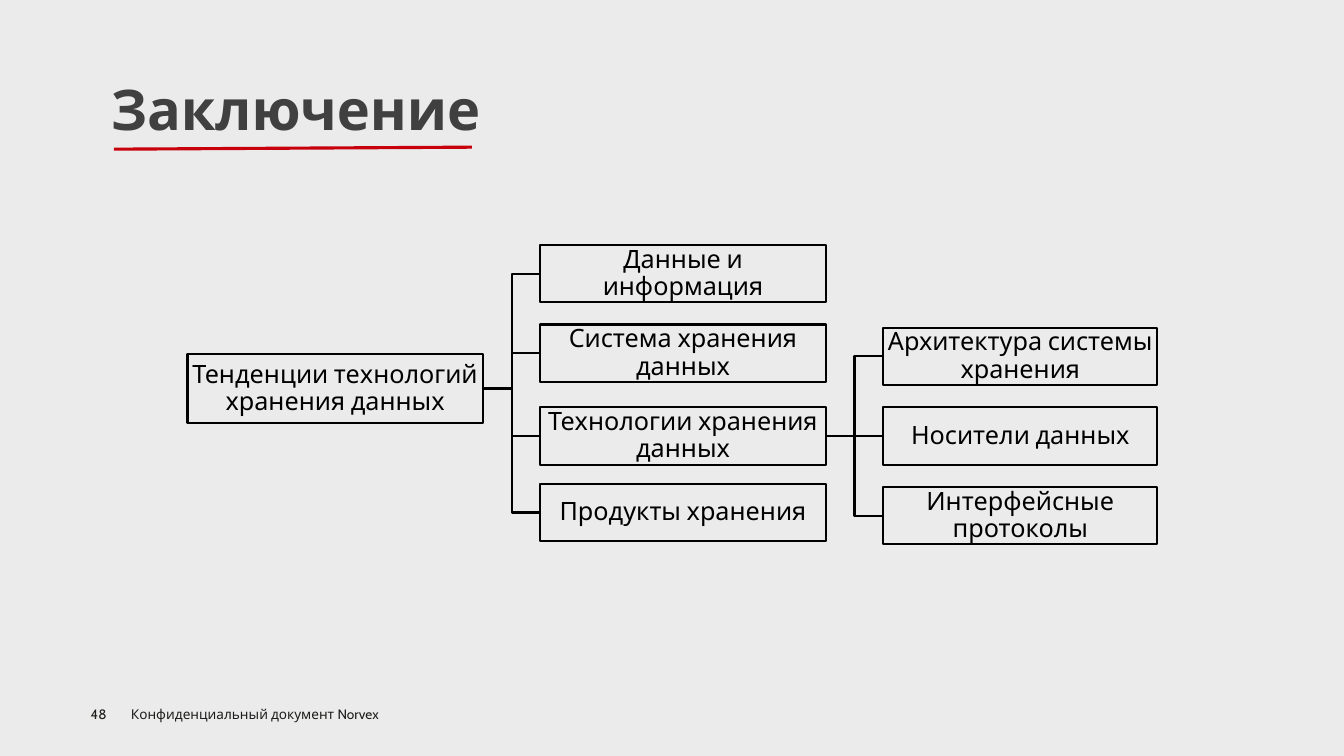
from dataclasses import dataclass

from lxml.etree import SubElement
from pptx import Presentation
from pptx.dml.color import RGBColor
from pptx.enum.shapes import MSO_CONNECTOR, MSO_SHAPE
from pptx.enum.text import MSO_ANCHOR, MSO_AUTO_SIZE, PP_ALIGN
from pptx.oxml.ns import qn
from pptx.shapes.autoshape import Shape
from pptx.shapes.connector import Connector
from pptx.slide import Slide
from pptx.text.text import TextFrame
from pptx.util import Emu, Pt

EMU_PER_PX = 9144
LEFT_SITE, RIGHT_SITE = 1, 3


@dataclass(frozen=True)
class Theme:
    font: str = "Cabin"
    background: str = "EBEBEB"
    title: str = "404040"
    accent: str = "C7000B"
    footer: str = "1D1D1B"
    diagram: str = "000000"
    title_size: float = 40
    node_size: float = 18
    footer_size: float = 9.7
    accent_width: float = 2.25
    diagram_width: float = 1.5


@dataclass(frozen=True)
class Label:
    text: str
    left: int
    top: int
    width: int
    height: int
    size: float
    color: str
    bold: bool = False
    wrap: bool = True
    inset: bool = True


@dataclass(frozen=True)
class Node:
    text: str
    left: int
    top: int
    width: int
    height: int = 57


THEME = Theme()

LABELS = [
    Label("Конфиденциальный документ Norvex", 120, 695, 281, 26,
          THEME.footer_size, THEME.footer),
    Label("48", 90, 700, 55, 16, THEME.footer_size, THEME.footer, inset=False),
    Label("Заключение", 100, 69, 401, 77, THEME.title_size, THEME.title,
          bold=True, wrap=False),
]

ROOT = Node("Тенденции технологий хранения данных", 186, 351, 293, 69)

TOPICS = [
    Node(text, 536, top, 283)
    for text, top in [
        ("Данные и информация", 243),
        ("Система хранения данных", 322),
        ("Технологии хранения данных", 404),
        ("Продукты хранения", 480),
    ]
]

SUBTOPICS = [
    Node(text, 876, 325 + 79 * row, 272)
    for row, text in enumerate(
        ["Архитектура системы хранения", "Носители данных", "Интерфейсные протоколы"]
    )
]


def px(length: int) -> Emu:
    return Emu(length * EMU_PER_PX)


def set_insets(frame: TextFrame, inset: Emu) -> None:
    frame.margin_left = frame.margin_right = inset
    frame.margin_top = frame.margin_bottom = inset


def add_span(frame: TextFrame, text: str, size: float, color: str,
             bold: bool = False) -> None:
    span = frame.paragraphs[0].add_run()
    span.text = text
    span.font.name = THEME.font
    span.font.size = Pt(size)
    span.font.bold = bold
    span.font.color.rgb = RGBColor.from_string(color)


def style_line(connector: Connector, color: str, width: float) -> None:
    connector.line.color.rgb = RGBColor.from_string(color)
    connector.line.width = Pt(width)
    SubElement(connector._element.spPr, qn("a:effectLst"))


def draw_label(page: Slide, label: Label) -> None:
    box = page.shapes.add_textbox(
        px(label.left), px(label.top), px(label.width), px(label.height))
    frame = box.text_frame
    frame.word_wrap = label.wrap
    frame.auto_size = MSO_AUTO_SIZE.SHAPE_TO_FIT_TEXT
    if not label.inset:
        set_insets(frame, px(0))
    add_span(frame, label.text, label.size, label.color, label.bold)


def draw_node(page: Slide, node: Node) -> Shape:
    box = page.shapes.add_shape(
        MSO_SHAPE.RECTANGLE,
        px(node.left), px(node.top), px(node.width), px(node.height))
    box.shadow.inherit = False
    box.fill.background()
    box.line.color.rgb = RGBColor.from_string(THEME.diagram)
    box.line.width = Pt(THEME.diagram_width)
    frame = box.text_frame
    frame.word_wrap = True
    frame.vertical_anchor = MSO_ANCHOR.MIDDLE
    set_insets(frame, px(1))
    para = frame.paragraphs[0]
    para.alignment = PP_ALIGN.CENTER
    para.line_spacing = 0.9
    add_span(frame, node.text, THEME.node_size, THEME.diagram)
    return box


def draw_branch(page: Slide, parent: Shape, child: Shape) -> None:
    level = parent.top + parent.height // 2 == child.top + child.height // 2
    kind = MSO_CONNECTOR.STRAIGHT if level else MSO_CONNECTOR.ELBOW
    branch = page.shapes.add_connector(kind, px(0), px(0), px(0), px(0))
    branch.begin_connect(parent, RIGHT_SITE)
    branch.end_connect(child, LEFT_SITE)
    style_line(branch, THEME.diagram, THEME.diagram_width)


def main() -> None:
    deck = Presentation()
    deck.slide_width, deck.slide_height = px(1333), px(750)
    page = deck.slides.add_slide(deck.slide_layouts[6])
    page.background.fill.solid()
    page.background.fill.fore_color.rgb = RGBColor.from_string(THEME.background)

    for label in LABELS:
        draw_label(page, label)
    underline = page.shapes.add_connector(
        MSO_CONNECTOR.STRAIGHT, px(468), px(146), px(113), px(148))
    style_line(underline, THEME.accent, THEME.accent_width)

    root = draw_node(page, ROOT)
    topics = [draw_node(page, node) for node in TOPICS]
    subtopics = [draw_node(page, node) for node in SUBTOPICS]
    for parent, children in [(root, topics), (topics[2], subtopics)]:
        for child in children:
            draw_branch(page, parent, child)

    deck.save("out.pptx")


if __name__ == "__main__":
    main()
